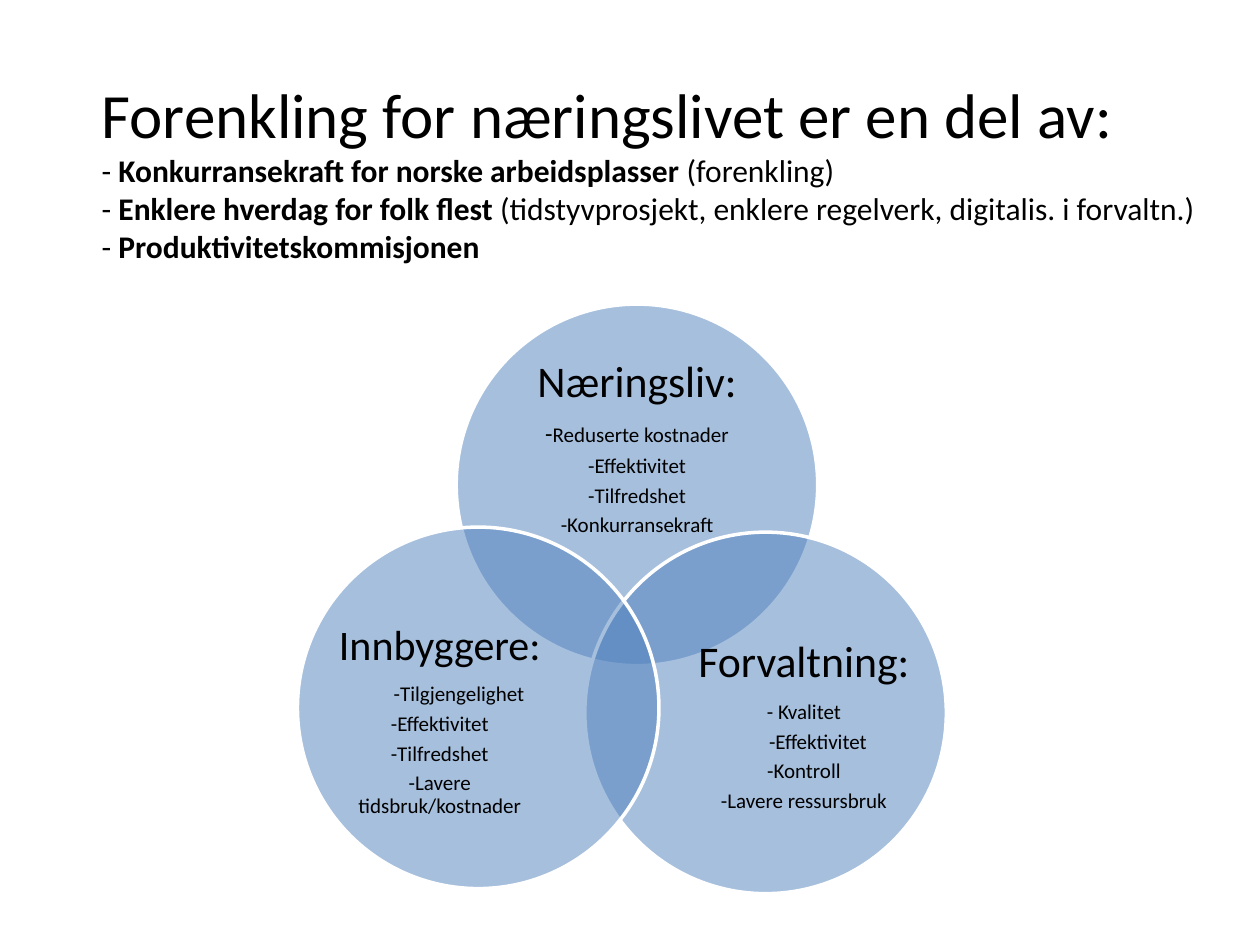
from dataclasses import dataclass

from lxml.etree import SubElement
from pptx import Presentation
from pptx.dml.color import RGBColor
from pptx.enum.shapes import MSO_SHAPE as Shape
from pptx.enum.text import MSO_ANCHOR as Anchor, PP_ALIGN as Align
from pptx.oxml.ns import qn
from pptx.util import Pt


@dataclass(frozen=True)
class Theme:
    font: str = "Calibri"
    ink: RGBColor = RGBColor(0x00, 0x00, 0x00)
    circle: RGBColor = RGBColor(0x4F, 0x81, 0xBD)
    outline: RGBColor = RGBColor(0xFF, 0xFF, 0xFF)
    opacity: int = 50  # percent
    outline_width: float = 2
    title: float = 36
    subtitle: float = 18
    heading: float = 25
    small_heading: float = 24
    large_dash: float = 14
    item: float = 12
    line_spacing: float = 0.9
    space_after: float = 0.33  # share of the type size


THEME = Theme()
DIAMETER = 206.6


def add_text(paragraph, text, *, size, bold=False):
    run = paragraph.add_run()
    run.text = text
    run.font.name = THEME.font
    run.font.size = Pt(size)
    run.font.bold = bold
    run.font.color.rgb = THEME.ink


def add_frame(slide, box, inset_x=0, inset_y=0):
    frame = slide.shapes.add_textbox(*map(Pt, box)).text_frame
    frame.word_wrap = True
    frame.vertical_anchor = Anchor.MIDDLE
    frame.margin_left = frame.margin_right = Pt(inset_x)
    frame.margin_top = frame.margin_bottom = Pt(inset_y)
    return frame


def add_title(slide, box, title, points):
    frame = add_frame(slide, box, 7.2, 3.6)
    add_text(frame.paragraphs[0], title, size=THEME.title)
    for strong, detail in points:
        paragraph = frame.add_paragraph()
        add_text(paragraph, "- ", size=THEME.subtitle)
        add_text(paragraph, strong, size=THEME.subtitle, bold=True)
        if detail:
            add_text(paragraph, f" {detail}", size=THEME.subtitle)


def add_circle(slide, left, top):
    circle = slide.shapes.add_shape(
        Shape.OVAL, Pt(left), Pt(top), Pt(DIAMETER), Pt(DIAMETER))
    circle.shadow.inherit = False
    circle.fill.solid()
    circle.fill.fore_color.rgb = THEME.circle
    color = circle.fill._xPr.find(f".//{qn('a:srgbClr')}")
    SubElement(color, qn("a:alpha"), val=str(THEME.opacity * 1000))
    circle.line.color.rgb = THEME.outline
    circle.line.width = Pt(THEME.outline_width)


def add_group_text(slide, box, heading, heading_size, items, dash_size):
    """Each item is its text and the indent that shifts it to the right."""
    frame = add_frame(slide, box)

    def format_paragraph(paragraph, size):
        paragraph.alignment = Align.CENTER
        paragraph.line_spacing = THEME.line_spacing
        paragraph.space_after = Pt(round(size * THEME.space_after, 2))

    format_paragraph(frame.paragraphs[0], heading_size)
    add_text(frame.paragraphs[0], heading, size=heading_size)
    for index, (text, indent) in enumerate(items):
        paragraph = frame.add_paragraph()
        first_size = THEME.item if index else dash_size
        format_paragraph(paragraph, first_size)
        paragraph._p.get_or_add_pPr().set("marL", str(Pt(indent)))
        add_text(paragraph, "-", size=first_size)
        add_text(paragraph, text, size=THEME.item)


def add_venn(slide, box, groups):
    left, top = box
    for (x, y), (text_x, text_y, width, height), *content in groups:
        add_circle(slide, left + x, top + y)
        text_box = (left + text_x, top + text_y, width, height)
        add_group_text(slide, text_box, *content)


# Circle offset, text box, heading, heading size, items, size of first dash
GROUPS = [
    ((90.7, 0), (118.1, 36, 151.9, 92.9), "Næringsliv:", THEME.heading,
     [("Reduserte kostnader", 0), ("Effektivitet", 0), ("Tilfredshet", 0),
      ("Konkurransekraft", 0)], THEME.large_dash),
    ((164.2, 130.3), (227.5, 184.3, 123.8, 113.8), "Forvaltning:", THEME.heading,
     [(" Kvalitet", 0), ("Effektivitet", 16), ("Kontroll", 0),
      ("Lavere ressursbruk", 0)], THEME.item),
    ((0, 127.4), (19.4, 181.4, 123.8, 113.8), "Innbyggere:", THEME.small_heading,
     [("Tilgjengelighet", 22), ("Effektivitet", 0), ("Tilfredshet", 0),
      ("Lavere tidsbruk/kostnader", 0)], THEME.item),
]

POINTS = [
    ("Konkurransekraft for norske arbeidsplasser", "(forenkling)"),
    ("Enklere hverdag for folk flest",
     "(tidstyvprosjekt, enklere regelverk, digitalis. i forvaltn.)"),
    ("Produktivitetskommisjonen", ""),
]


def main():
    presentation = Presentation()
    presentation.slide_width, presentation.slide_height = Pt(720), Pt(540)
    slide = presentation.slides.add_slide(presentation.slide_layouts[6])
    # Title with the three goals
    add_title(slide, (51, 43.2, 649.4, 108),
              "Forenkling for næringslivet er en del av:", POINTS)
    # Three overlapping groups
    add_venn(slide, (170, 173.8), GROUPS)
    presentation.save("out.pptx")


if __name__ == "__main__":
    main()
